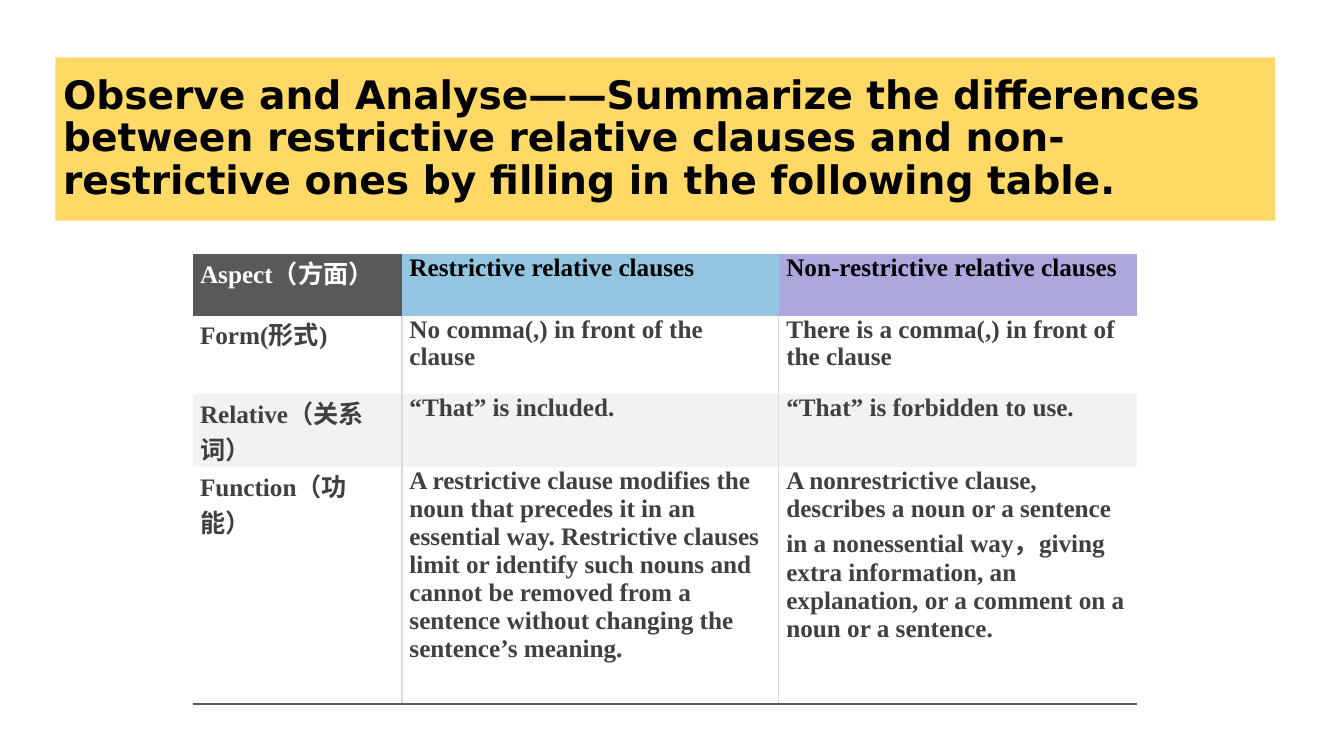
from dataclasses import dataclass

from lxml import etree
from pptx import Presentation
from pptx.dml.color import RGBColor
from pptx.enum import text
from pptx.oxml.ns import qn
from pptx.util import Pt


@dataclass(frozen=True)
class Theme:
    title_font: str = "DejaVu Sans"
    table_font: str = "Times New Roman"
    title_size: int = 28
    table_size: int = 18
    title_fill: str = "FFD966"
    black: str = "000000"
    white: str = "FFFFFF"
    body_text: str = "404040"
    header_fills: tuple = ("595959", "93C5E1", "ACA7DD")
    band_fills: tuple = ("FFFFFF", "F2F2F2")
    column_rule: str = "D9D9D9"
    bottom_rule: str = "595959"


class SlideBuilder:
    def __init__(self, slide, theme):
        self.slide = slide
        self.theme = theme

    def style_text(self, paragraph, font_name, size, color):
        for run in paragraph.runs:
            run.font.name = font_name
            run.font.size = Pt(size)
            run.font.bold = True
            run.font.color.rgb = RGBColor.from_string(color)

    def title(self, wording, left, top, width, height):
        theme = self.theme
        shape = self.slide.shapes.title
        shape.left, shape.top = Pt(left), Pt(top)
        shape.width, shape.height = Pt(width), Pt(height)
        shape.fill.solid()
        shape.fill.fore_color.rgb = RGBColor.from_string(theme.title_fill)
        frame = shape.text_frame
        frame.text = wording
        frame.word_wrap = True
        frame.auto_size = text.MSO_AUTO_SIZE.NONE
        frame.vertical_anchor = text.MSO_ANCHOR.MIDDLE
        frame.margin_left = frame.margin_right = Pt(5.4)
        frame.margin_top = frame.margin_bottom = Pt(2.7)
        paragraph = frame.paragraphs[0]
        paragraph.alignment = text.PP_ALIGN.LEFT
        paragraph.line_spacing = 0.9
        self.style_text(paragraph, theme.title_font, theme.title_size, theme.black)

    def borders(self, cell, rules):
        """Draw the edges named in rules as (colour, width); clear the others."""
        properties = cell._tc.get_or_add_tcPr()
        for edge in "LRTB":
            line = etree.SubElement(properties, qn(f"a:ln{edge}"))
            if edge in rules:
                color, width = rules[edge]
                line.set("w", str(Pt(width)))
                fill = etree.SubElement(line, qn("a:solidFill"))
                etree.SubElement(fill, qn("a:srgbClr"), val=color)
            else:
                etree.SubElement(line, qn("a:noFill"))

    def cell(self, cell, wording, fill, color, rules):
        self.borders(cell, rules)
        cell.fill.solid()
        cell.fill.fore_color.rgb = RGBColor.from_string(fill)
        cell.margin_left = cell.margin_right = Pt(5.4)
        cell.margin_top = cell.margin_bottom = 0
        cell.text_frame.text = wording
        self.style_text(cell.text_frame.paragraphs[0], self.theme.table_font,
                        self.theme.table_size, color)

    def table(self, rows, left, top, widths, heights):
        theme = self.theme
        table = self.slide.shapes.add_table(
            len(rows), len(widths), Pt(left), Pt(top),
            Pt(sum(widths)), Pt(sum(heights))).table
        table.first_row = table.horz_banding = False
        for column, width in zip(table.columns, widths):
            column.width = Pt(width)
        for row, height in zip(table.rows, heights):
            row.height = Pt(height)

        divider_widths = (1, 0.5)
        for i, row in enumerate(rows):
            for j, wording in enumerate(row):
                rules = {}
                if i == 0:
                    fill = theme.header_fills[j]
                    color = theme.white if j == 0 else theme.black
                else:
                    fill = theme.band_fills[(i - 1) % 2]
                    color = theme.body_text
                    if j > 0:
                        rules["L"] = (theme.column_rule, divider_widths[j - 1])
                    if j < len(row) - 1:
                        rules["R"] = (theme.column_rule, divider_widths[j])
                if i == len(rows) - 1:
                    rules["B"] = (theme.bottom_rule, 1.5)
                self.cell(table.cell(i, j), wording, fill, color, rules)


CLAUSE_ROWS = [
    ("Aspect（方面）", "Restrictive relative clauses", "Non-restrictive relative clauses"),
    ("Form(形式)", "No comma(,) in front of the clause",
     "There is a comma(,) in front of the clause"),
    ("Relative（关系词）", "“That” is included.", "“That” is forbidden to use."),
    ("Function（功能）",
     "A restrictive clause modifies the noun that precedes it in an essential way. "
     "Restrictive clauses limit or identify such nouns and cannot be removed from a "
     "sentence without changing the sentence’s meaning.",
     "A nonrestrictive clause, describes a noun or a sentence in a nonessential way，"
     "giving extra information, an explanation, or a comment on a noun or a sentence."),
]


def main():
    presentation = Presentation()
    presentation.slide_width, presentation.slide_height = Pt(960), Pt(540)
    title_only = presentation.slide_layouts[5]
    builder = SlideBuilder(presentation.slides.add_slide(title_only), Theme())
    builder.title(
        "Observe and Analyse——Summarize the differences between restrictive relative "
        "clauses and non-restrictive ones by filling in the following table.",
        39.6, 41, 871.2, 116.6)
    builder.table(CLAUSE_ROWS, 137.5, 181.4,
                  widths=(149.6, 269.2, 256.2), heights=(44, 56.2, 28, 169.2))
    presentation.save("out.pptx")


if __name__ == "__main__":
    main()
